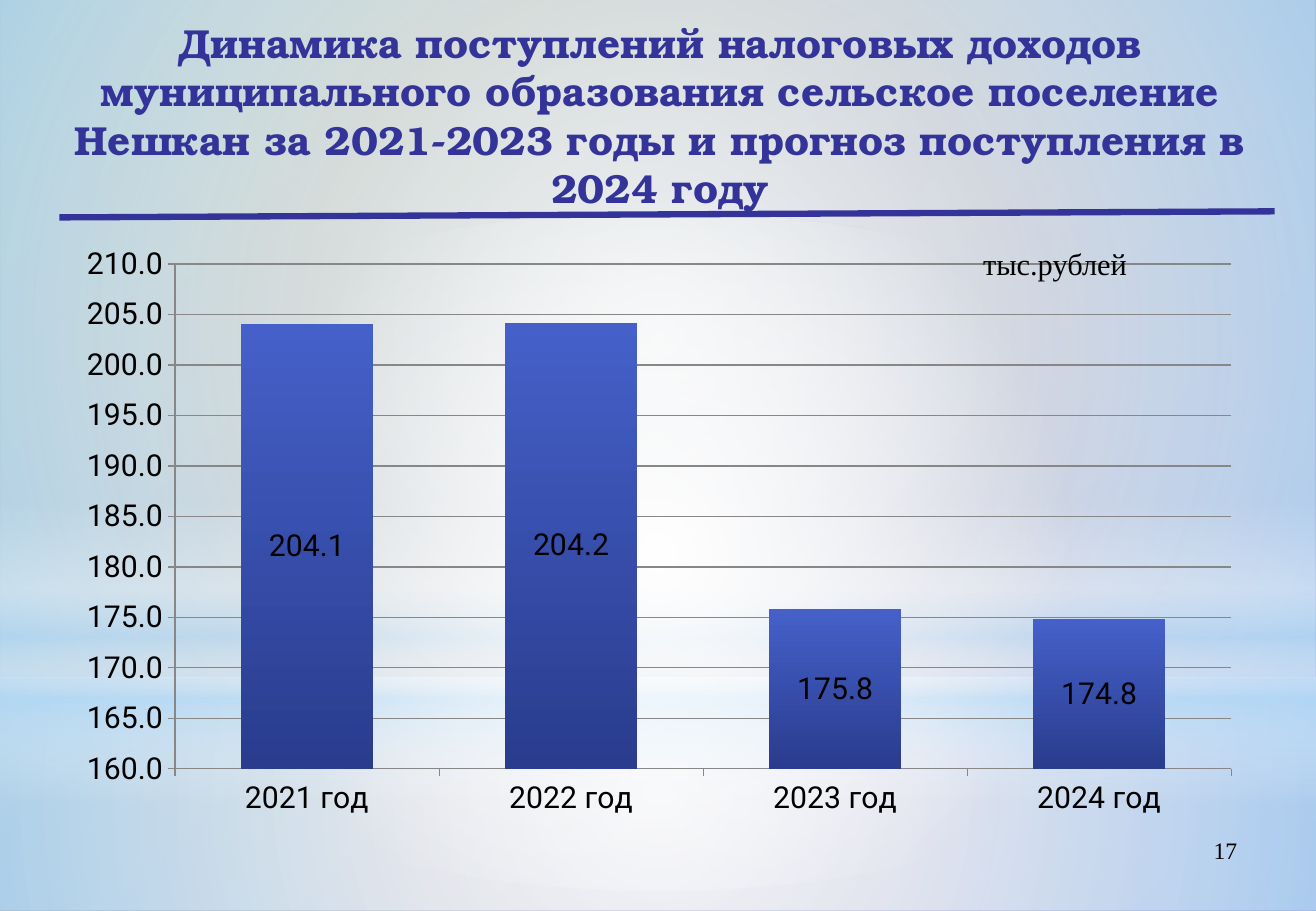
from typing import NamedTuple

from lxml import etree
from pptx import Presentation
from pptx.chart.data import CategoryChartData
from pptx.dml.color import RGBColor
from pptx.enum.chart import XL_CHART_TYPE, XL_LABEL_POSITION, XL_TICK_MARK
from pptx.enum.shapes import MSO_CONNECTOR, MSO_SHAPE
from pptx.enum.text import MSO_ANCHOR, MSO_AUTO_SIZE, PP_ALIGN
from pptx.oxml import parse_xml
from pptx.oxml.ns import nsdecls, qn
from pptx.util import Pt

RECT, OVAL = MSO_SHAPE.RECTANGLE, MSO_SHAPE.OVAL
LEFT, CENTER, RIGHT = PP_ALIGN.LEFT, PP_ALIGN.CENTER, PP_ALIGN.RIGHT
STACKED = XL_CHART_TYPE.COLUMN_STACKED
TICK_OUT = XL_TICK_MARK.OUTSIDE
WIDE, HIGH = 780.48, 540
SERIF, SLAB, SANS = "Times New Roman", "TeX Gyre Bonum", "Roboto"
COLORS = {
    "white": "FFFFFF", "sky": "B4DCFA", "black": "000000", "navy": "333399",
    "sage": "96AB94", "blue": "8488C4", "grid": "878787",
    "bar_top": "4560C9", "bar_end": "293C8D",
}


class Stop(NamedTuple):
    pos: int
    color: str
    alpha: int


class Glow(NamedTuple):
    kind: MSO_SHAPE
    top: float
    high: float
    radial: bool
    stops: list[Stop]


class Note(NamedTuple):
    text: str
    left: float
    top: float
    wide: float
    high: float
    size: float
    align: PP_ALIGN


GLOWS = [
    Glow(RECT, 401.76, 138.24, True,
         [Stop(0, "white", 91), Stop(37, "white", 76), Stop(100, "sky", 79)]),
    Glow(RECT, 0, 401.76, True,
         [Stop(0, "white", 89), Stop(48, "white", 62), Stop(100, "sky", 79)]),
    Glow(RECT, 296.64, 180, False,
         [Stop(0, "white", 0), Stop(29, "white", 30), Stop(45, "sky", 40),
          Stop(55, "white", 26), Stop(65, "sky", 60), Stop(100, "white", 0)]),
    Glow(OVAL, 126, 401.76, True,
         [Stop(0, "white", 100), Stop(56, "white", 0)]),
]
TITLE = ("Динамика поступлений налоговых доходов муниципального образования "
         "сельское поселение Нешкан за 2021-2023 годы и прогноз поступления "
         "в 2024 году")
NOTES = [
    Note("17", 558.72, 491.76, 182.16, 37.44, 14, RIGHT),
    Note("тыс.рублей", 576, 141.84, 100.8, 28.8, 18, LEFT),
]
TAXES = {"2021 год": 204.1, "2022 год": 204.2,
         "2023 год": 175.8, "2024 год": 174.8}
PLOT = {"x": 0.094, "y": 0.05, "w": 0.887, "h": 0.85}


def rgb(name: str) -> RGBColor:
    return RGBColor.from_string(COLORS[name])


def blend(fill, first: str, last: str, angle: float) -> None:
    """Give a fill two colours; the angle runs counter-clockwise."""
    fill.gradient()
    fill.gradient_angle = angle
    for stop, name in zip(fill.gradient_stops, (first, last)):
        stop.color.rgb = rgb(name)


def add_glow(slide, glow: Glow) -> None:
    """Draw a full-width shape with a many-stop translucent gradient."""
    shape = slide.shapes.add_shape(
        glow.kind, 0, Pt(glow.top), Pt(WIDE), Pt(glow.high))
    shape.shadow.inherit = False
    shape.line.fill.background()
    stops = "".join(
        f'<a:gs pos="{s.pos * 1000}"><a:srgbClr val="{COLORS[s.color]}">'
        f'<a:alpha val="{s.alpha * 1000}"/></a:srgbClr></a:gs>'
        for s in glow.stops)
    course = ('<a:path path="circle"><a:fillToRect l="50000" t="50000" '
              'r="50000" b="50000"/></a:path>' if glow.radial
              else '<a:lin ang="5400000" scaled="0"/>')
    shape.element.spPr.find(qn("a:prstGeom")).addnext(parse_xml(
        f'<a:gradFill {nsdecls("a")} rotWithShape="1">'
        f'<a:gsLst>{stops}</a:gsLst>{course}</a:gradFill>'))


def add_run(para, text: str, face: str, size: float, color: str,
            bold: bool = False) -> None:
    run = para.add_run()
    run.text = text
    run.font.name, run.font.size, run.font.bold = face, Pt(size), bold
    run.font.color.rgb = rgb(color)


def set_title(slide) -> None:
    title = slide.shapes.title
    title.element.getparent().append(title.element)
    title.left, title.top = Pt(40.32), Pt(10)
    title.width, title.height = Pt(702), Pt(116)
    frame = title.text_frame
    frame.word_wrap = True
    frame.auto_size = MSO_AUTO_SIZE.NONE
    frame.vertical_anchor = MSO_ANCHOR.MIDDLE
    frame.margin_left = frame.margin_right = 0
    frame.margin_top = frame.margin_bottom = 0
    para = frame.paragraphs[0]
    para.alignment, para.line_spacing = CENTER, 1.0
    para.space_before = Pt(0)
    add_run(para, TITLE, SLAB, 24, "navy", True)


def add_note(slide, note: Note) -> None:
    box = slide.shapes.add_textbox(
        Pt(note.left), Pt(note.top), Pt(note.wide), Pt(note.high))
    para = box.text_frame.paragraphs[0]
    box.text_frame.word_wrap = note.align == RIGHT
    para.alignment = note.align
    add_run(para, note.text, SERIF, note.size, "black")


def add_rule(slide) -> None:
    rule = slide.shapes.add_connector(
        MSO_CONNECTOR.STRAIGHT, Pt(35.28), Pt(128.88), Pt(756), Pt(125.28))
    rule.line.color.rgb, rule.line.width = rgb("navy"), Pt(3.75)
    etree.SubElement(rule.element.spPr, qn("a:effectLst"))


def fix_plot(chart) -> None:
    """Pin the inner plot area to set fractions of the chart frame."""
    area = chart.element.find(".//" + qn("c:plotArea"))
    for old in area.findall(qn("c:layout")):
        area.remove(old)
    parts = "".join(f'<c:{k}Mode val="edge"/>' for k in "xy")
    parts += "".join(f'<c:{k} val="{v}"/>' for k, v in PLOT.items())
    area.insert(0, parse_xml(
        f'<c:layout {nsdecls("c")}><c:manualLayout>'
        f'<c:layoutTarget val="inner"/>{parts}</c:manualLayout></c:layout>'))


def add_bars(slide) -> None:
    data = CategoryChartData(number_format="0.0")
    data.categories = list(TAXES)
    data.add_series("Series 1", list(TAXES.values()))
    chart = slide.shapes.add_chart(
        STACKED, Pt(37.44), Pt(138.96), Pt(706.32), Pt(352.08), data).chart
    chart.has_title = chart.has_legend = False
    chart.font.name, chart.font.size = SANS, Pt(17.9)
    chart.font.color.rgb = rgb("black")
    plot = chart.plots[0]
    plot.gap_width, plot.overlap = 100, 100
    plot.vary_by_categories = False
    blend(plot.series[0].format.fill, "bar_top", "bar_end", 270)
    labels = plot.series[0].data_labels
    labels.show_value = True
    labels.number_format, labels.number_format_is_linked = "0.0", False
    labels.position = XL_LABEL_POSITION.CENTER
    scale = chart.value_axis
    scale.minimum_scale, scale.maximum_scale = 160, 210
    scale.major_unit = 5
    scale.has_major_gridlines = True
    scale.tick_labels.number_format = "0.0"
    scale.tick_labels.number_format_is_linked = False
    for axis in (scale, chart.category_axis):
        axis.major_tick_mark = TICK_OUT
    for part in (scale, chart.category_axis, scale.major_gridlines):
        part.format.line.color.rgb = rgb("grid")
        part.format.line.width = Pt(0.75)
    fix_plot(chart)


def main() -> None:
    deck = Presentation()
    deck.slide_width, deck.slide_height = Pt(WIDE), Pt(HIGH)
    slide = deck.slides.add_slide(deck.slide_layouts[5])
    blend(slide.background.fill, "sage", "blue", 315)
    for glow in GLOWS:
        add_glow(slide, glow)
    set_title(slide)
    add_rule(slide)
    add_bars(slide)
    for note in NOTES:
        add_note(slide, note)
    deck.save("out.pptx")


if __name__ == "__main__":
    main()
